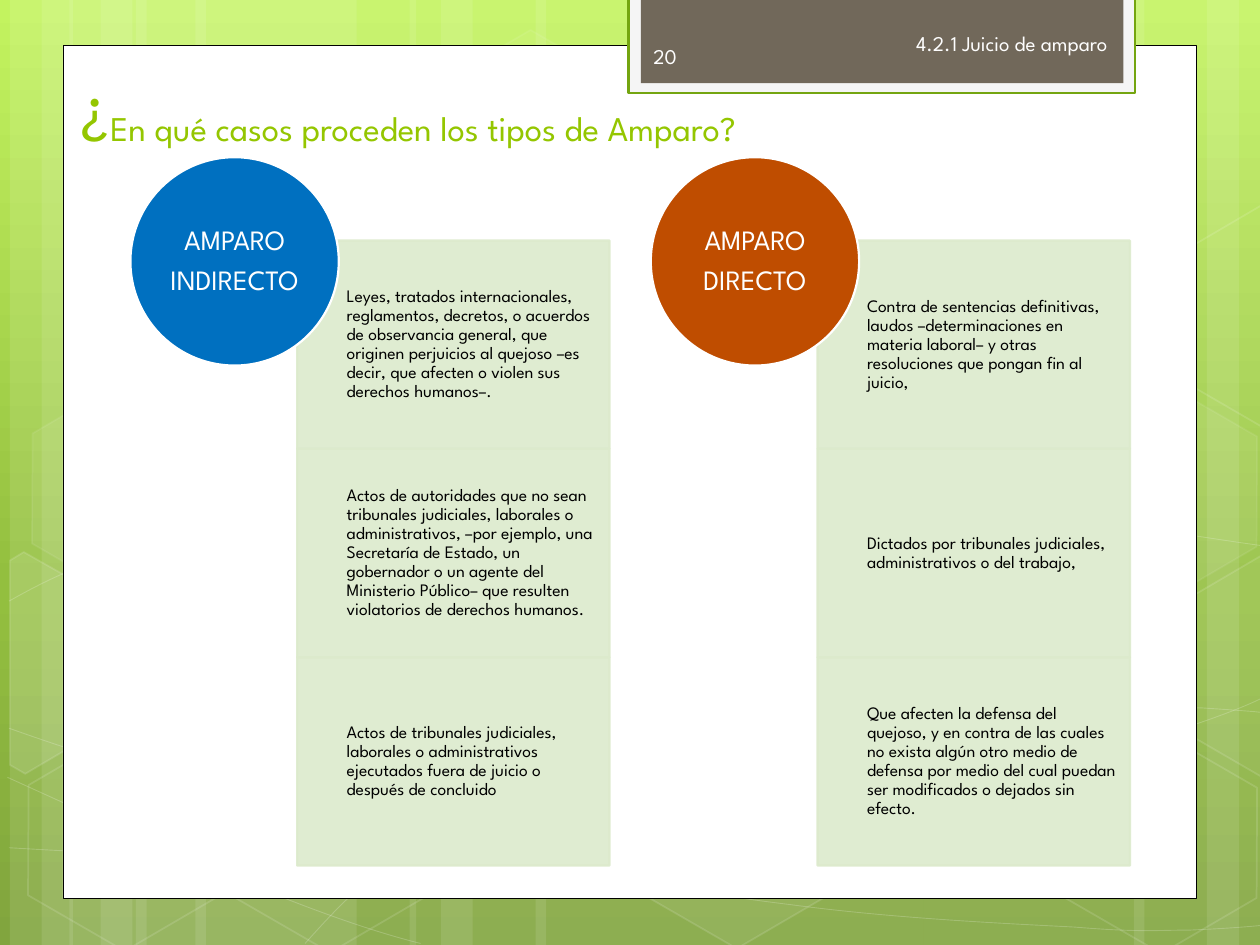
"""Build the slide on when each type of amparo applies."""
from copy import deepcopy

from lxml import etree
from pptx import Presentation
from pptx.dml.color import RGBColor
from pptx.enum.shapes import MSO_SHAPE as SHAPE
from pptx.enum.text import MSO_ANCHOR as ANCHOR, PP_ALIGN as ALIGN
from pptx.oxml.ns import qn
from pptx.util import Cm, Pt


def paint(fill, color, alpha=100):
    if alpha == 0:
        fill.background()
        return
    fill.solid()
    fill.fore_color.rgb = RGBColor.from_string(color)
    if alpha < 100:
        clr = fill._xPr.find(qn("a:solidFill"))[0]
        etree.SubElement(clr, qn("a:alpha")).set("val", str(alpha * 1000))


def write(s, text, size, color, align=ALIGN.LEFT, spacing=None, after=0):
    tf = s.text_frame
    tf.word_wrap = True
    tf.vertical_anchor = ANCHOR.MIDDLE
    tf.text = text
    for p in tf.paragraphs:
        p.alignment = align
        p.line_spacing = spacing
        p.space_after = Pt(after)
        for r in p.runs:
            r.font.name = "League Spartan"
            r.font.size = Pt(size)
            paint(r.font.fill, color)
    return tf


prs = Presentation()
prs.slide_width, prs.slide_height = Cm(25.4), Cm(19.05)
slide = prs.slides.add_slide(prs.slide_layouts[6])
shapes = slide.shapes

bg = slide.background.fill
bg.gradient()
bg.gradient_angle = 270
first = bg._xPr.find(qn("a:gradFill")).find(qn("a:gsLst"))[0]
first.addnext(deepcopy(first))
stops = [(0, "C3F35F"), (0.62, "93BF3F"), (1, "81A53E")]
for stop, (position, color) in zip(bg.gradient_stops, stops):
    stop.position = position
    stop.color.rgb = RGBColor.from_string(color)

stripes = [
    (2.74, 4.45), (0.2, 1.27), (0.84, 2.12), (3.94, 4.45), (1.4, 1.27), (2.03, 2.12),
    (18.62, 4.45), (24.33, 1.27), (22.86, 2.12), (10.8, 7.82), (8.26, 1.27), (8.89, 2.12),
]
for x, w in stripes:
    s = shapes.add_shape(SHAPE.RECTANGLE, Cm(x), 0, Cm(w), prs.slide_height)
    paint(s.fill, "FFFFFF", 10)
    s.line.fill.background()

curves = [
    [(0.18, 17.09), (1.55, 17.17), (2.92, 17.25), (4.83, 17.22), (6.73, 17.2),
     (9.09, 17.15), (11.63, 16.89), (14.17, 16.64), (17.78, 16.16), (20.12, 15.67),
     (22.43, 15.19), (24.82, 14.43), (25.58, 14)],
    [(0.18, 12.12), (0.91, 11.71), (1.65, 11.33), (3.07, 10.95), (4.52, 10.57),
     (6.58, 10.01), (8.81, 9.83), (11.07, 9.65), (13.82, 9.63), (16.61, 9.83),
     (19.41, 10.03), (24.05, 10.82), (25.58, 11.02)],
    [(0.15, 15.67), (3.23, 17.07), (6.27, 18.47), (8.48, 19.02)],
    [(0.18, 14.68), (0.97, 14.96), (1.78, 15.24), (3.25, 15.65), (4.72, 16.03),
     (6.93, 16.66), (9.07, 17.09), (11.18, 17.53), (13.84, 17.98), (15.95, 18.24),
     (18.06, 18.52), (20.32, 18.62), (21.67, 18.69), (22.99, 18.8), (23.34, 18.75),
     (24, 18.75), (24.66, 18.72), (25.12, 18.69), (25.58, 18.64)],
    [(6.15, 19.02), (6.6, 18.52), (7.06, 18.01), (7.67, 17.55), (8.28, 17.09),
     (9.14, 16.59), (9.86, 16.23), (10.57, 15.88), (11, 15.72), (11.94, 15.47),
     (12.85, 15.21), (14.55, 14.86), (15.44, 14.68), (16.36, 14.5), (16.48, 14.5),
     (17.27, 14.45), (18.08, 14.38), (19.3, 14.3), (20.17, 14.27), (21.06, 14.25),
     (22.5, 14.27), (22.5, 14.27), (23, 14.27), (23.6, 14.27), (24.21, 14.27),
     (24.66, 14.3), (25.1, 14.33), (25.32, 14.35), (25.55, 14.38), (25.48, 14.35),
     (25.55, 14.38)],
]
for curve in curves:
    points = [(Cm(x), Cm(y)) for x, y in curve]
    builder = shapes.build_freeform(*points[0])
    builder.add_line_segments(points[1:], close=False)
    s = builder.convert_to_shape()
    segments = list(s._element.spPr.iter(qn("a:lnTo")))
    outline = segments[0].getparent()
    for i in range(0, len(segments), 3):
        bezier = etree.SubElement(outline, qn("a:cubicBezTo"))
        for segment in segments[i:i + 3]:
            bezier.append(segment[0])
            outline.remove(segment)
    s.fill.background()
    paint(s.line.fill, "FFFFFF", 20)
    s.line.width = Pt(0.5)

hexagons = [
    (8.48, 0.91, 4, 8), (12.62, 14.96, 6, 12), (0.28, 15.01, 0, 12), (0.36, 7.92, 7, 8),
    (4.42, 15.04, 0, 12), (19.13, 11.51, 10, 12), (21.18, 15.06, 0, 12), (21.18, 7.98, 7, 8),
]
for x, y, fill_alpha, line_alpha in hexagons:
    s = shapes.add_shape(SHAPE.HEXAGON, Cm(x), Cm(y), Cm(4.45), Cm(3.86))
    s.adjustments[0] = 0.285
    s.rotation = 30
    paint(s.fill, "FFFFFF", fill_alpha)
    paint(s.line.fill, "FFFFFF", line_alpha)
    s.line.width = Pt(1)

cut_hexagons = [
    (10, [(0.2, 11.3), (0.48, 11.13), (2.44, 12.24), (2.41, 14.48), (0.51, 15.6), (0.2, 15.42)]),
    (4, [(23.52, 12.32), (25.43, 11.2), (25.63, 11.33), (25.63, 15.57), (25.45, 15.67),
         (23.52, 14.55)]),
    (0, [(23.52, 5.26), (25.43, 4.14), (25.65, 4.27), (25.63, 8.51), (25.45, 8.61),
         (23.52, 7.49)]),
]
for alpha, corners in cut_hexagons:
    points = [(Cm(x), Cm(y)) for x, y in corners]
    builder = shapes.build_freeform(*points[0])
    builder.add_line_segments(points[1:])
    s = builder.convert_to_shape()
    paint(s.fill, "FFFFFF", alpha)
    paint(s.line.fill, "FFFFFF", 12)
    s.line.width = Pt(1)

panels = [
    (1.27, 0.91, 22.86, 17.2, "FFFFFF", "000000", 0.5),
    (12.67, -0.05, 10.21, 1.93, "F5F5F5", "74A510", 1.25),
    (12.92, -0.05, 9.73, 1.73, "71685A", None, 0),
]
for x, y, w, h, color, line, width in panels:
    s = shapes.add_shape(SHAPE.RECTANGLE, Cm(x), Cm(y), Cm(w), Cm(h))
    paint(s.fill, color)
    paint(s.line.fill, line, 100 if line else 0)
    if line:
        s.line.width = Pt(width)

title = shapes.add_textbox(Cm(1.39), Cm(2.32), Cm(22.71), Cm(0.91))
tf = write(title, "¿", 36, "94C600")
tf.vertical_anchor = ANCHOR.BOTTOM
r = tf.paragraphs[0].add_run()
r.text = "En qué casos proceden los tipos de Amparo?"
r.font.name = "League Spartan"
r.font.size = Pt(19.8)
paint(r.font.fill, "94C600")

section = shapes.add_textbox(Cm(16.66), Cm(0.37), Cm(5.92), Cm(1.02))
write(section, "4.2.1 Juicio de amparo", 12, "FEFEFE", ALIGN.RIGHT)
number = shapes.add_textbox(Cm(12.92), Cm(0.62), Cm(3.71), Cm(1.02))
write(number, "20", 12, "FEFEFE")

columns = [
    ("AMPARO\nINDIRECTO", "0070C0", [
        "Leyes, tratados internacionales, reglamentos, decretos, o acuerdos de observancia general, que originen perjuicios al quejoso –es decir, que afecten o violen sus derechos humanos–.",
        "Actos de autoridades que no sean tribunales judiciales, laborales o administrativos, –por ejemplo, una Secretaría de Estado, un gobernador o un agente del Ministerio Público– que resulten violatorios de derechos humanos.",
        "Actos de tribunales judiciales, laborales o administrativos ejecutados fuera de juicio o después de concluido"]),
    ("AMPARO\nDIRECTO", "BF4D00", [
        "Contra de sentencias definitivas, laudos –determinaciones en materia laboral– y otras resoluciones que pongan fin al juicio,",
        "Dictados por tribunales judiciales, administrativos o del trabajo,",
        "Que afecten la defensa del quejoso, y en contra de las cuales no exista algún otro medio de defensa por medio del cual puedan ser modificados o dejados sin efecto."]),
]
side = 4.2
for col, (heading, color, cases) in enumerate(columns):
    left = 2.63 + 10.49 * col
    for row, case in enumerate(cases):
        s = shapes.add_shape(SHAPE.RECTANGLE, Cm(left + 3.36), Cm(4.85 + side * row),
                             Cm(6.3), Cm(side))
        paint(s.fill, "DCEACC", 90)
        paint(s.line.fill, "DCEACC", 90)
        s.line.width = Pt(1.25)
        tf = write(s, case, 10, "000000", spacing=0.9, after=3.5)
        tf.margin_left = Cm(1)
        tf.margin_right = tf.margin_top = tf.margin_bottom = Cm(0.2)
    s = shapes.add_shape(SHAPE.OVAL, Cm(left), Cm(3.17), Cm(side), Cm(side))
    paint(s.fill, color)
    paint(s.line.fill, "FFFFFF")
    s.line.width = Pt(1.25)
    tf = write(s, heading, 16, "FFFFFF", ALIGN.CENTER, 0.9, 5.6)
    tf.margin_left = tf.margin_right = tf.margin_top = tf.margin_bottom = 0

for s in shapes:
    s.shadow.inherit = False

prs.save("out.pptx")
